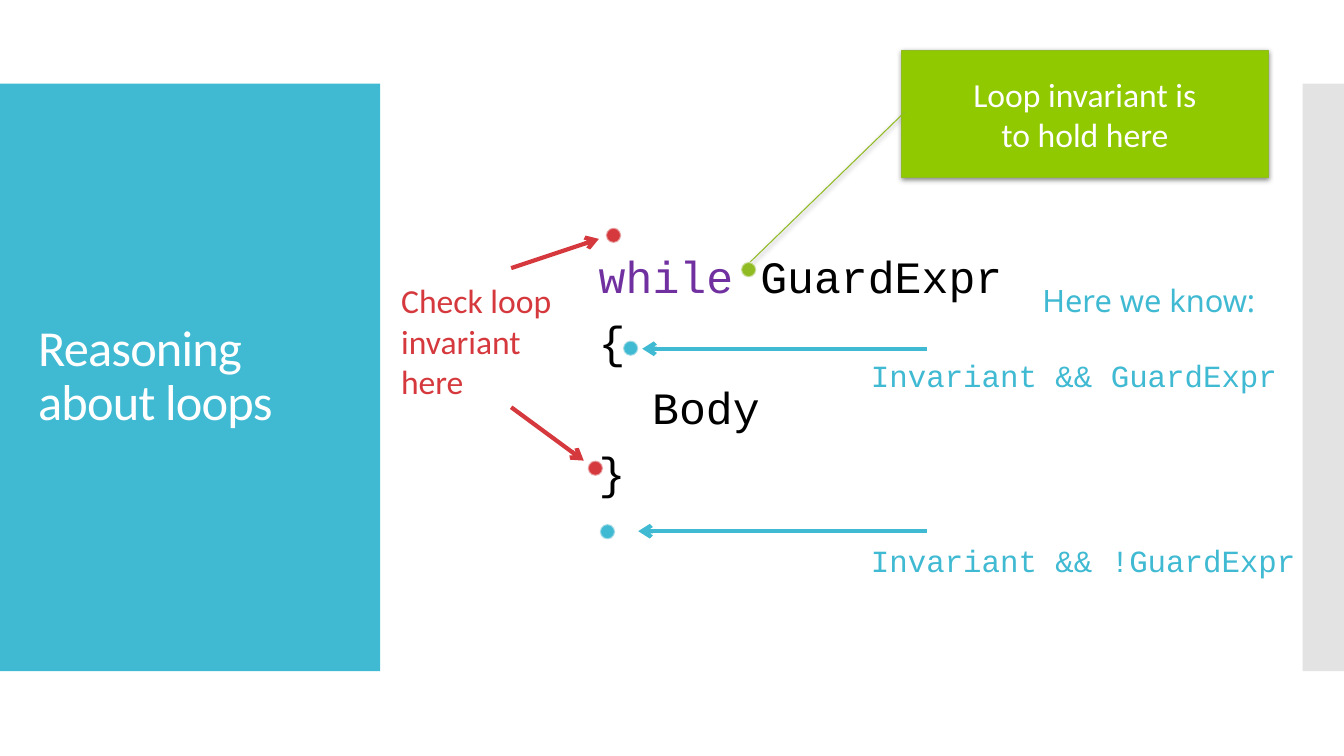
from dataclasses import dataclass

from lxml import etree
from pptx import Presentation
from pptx.dml.color import RGBColor
from pptx.enum.shapes import MSO_CONNECTOR, MSO_SHAPE
from pptx.enum.text import MSO_ANCHOR, MSO_AUTO_SIZE, PP_ALIGN
from pptx.oxml import parse_xml
from pptx.oxml.ns import nsdecls, qn
from pptx.util import Inches, Pt


@dataclass(frozen=True)
class Theme:
    teal: str = "40BAD2"
    red: str = "D5393D"
    green: str = "90BB23"
    callout: str = "90C900"
    keyword: str = "7030A0"
    code: str = "000000"
    white: str = "FFFFFF"
    edge: str = "C8C8C8"
    dot_rim: str = "F9F9F9"
    sans: str = "Calibri"
    mono: str = "Courier New"
    note: str = "Noto Sans"
    title_size: int = 36
    code_size: int = 32
    label_size: int = 24
    fact_size: int = 22


THEME = Theme()
DOT_SIZE = 0.15
CODE_INDENT = 0.53


def set_alpha(fill, percent):
    color = fill._xPr.find(f".//{qn('a:srgbClr')}")
    etree.SubElement(color, qn("a:alpha")).set("val", str(percent * 1000))


def style_run(run, font, size, color):
    run.font.name = font
    run.font.size = Pt(size)
    run.font.color.rgb = RGBColor.from_string(color)


def add_block(slide, kind, box, color):
    block = slide.shapes.add_shape(kind, *map(Inches, box))
    block.shadow.inherit = False
    block.fill.solid()
    block.fill.fore_color.rgb = RGBColor.from_string(color)
    block.line.fill.background()
    return block


def add_text(slide, box, text, font, size, color, anchor=MSO_ANCHOR.TOP):
    label = slide.shapes.add_textbox(*map(Inches, box))
    frame = label.text_frame
    frame.word_wrap = True
    frame.vertical_anchor = anchor
    frame.text = text
    for paragraph in frame.paragraphs:
        for run in paragraph.runs:
            style_run(run, font, size, color)
    return frame


def add_label(slide, box, text, font, size, color):
    frame = add_text(slide, box, text, font, size, color)
    frame.auto_size = MSO_AUTO_SIZE.SHAPE_TO_FIT_TEXT


def add_dot(slide, left, top, color):
    dot = add_block(slide, MSO_SHAPE.OVAL, (left, top, DOT_SIZE, DOT_SIZE), color)
    dot.line.color.rgb = RGBColor.from_string(THEME.dot_rim)
    dot.line.width = Pt(1.35)
    set_alpha(dot.line.fill, 50)


def add_arrow(slide, start, end, color):
    arrow = slide.shapes.add_connector(
        MSO_CONNECTOR.STRAIGHT, *map(Inches, (*start, *end)))
    arrow.line.color.rgb = RGBColor.from_string(color)
    arrow.line.width = Pt(3)
    etree.SubElement(arrow.line._ln, qn("a:tailEnd")).set("type", "arrow")
    etree.SubElement(arrow._element.spPr, qn("a:effectLst"))


def add_callout(slide, box, text):
    callout = add_block(slide, MSO_SHAPE.LINE_CALLOUT_1, box, THEME.callout)
    for index, value in enumerate((0.484, 0.01, 1.709, -0.427)):
        callout.adjustments[index] = value
    callout.line.color.rgb = RGBColor.from_string(THEME.green)
    callout.line.width = Pt(0.75)
    # Soft shadow straight below
    shadow = parse_xml(
        f'<a:outerShdw {nsdecls("a")} blurRad="{Pt(3.5)}" dist="{Pt(1.1)}" '
        'dir="5400000" rotWithShape="0"><a:srgbClr val="000000">'
        '<a:alpha val="45000"/></a:srgbClr></a:outerShdw>')
    callout._element.spPr.find(qn("a:effectLst")).append(shadow)
    frame = callout.text_frame
    frame.vertical_anchor = MSO_ANCHOR.MIDDLE
    paragraph = frame.paragraphs[0]
    paragraph.text = text
    paragraph.alignment = PP_ALIGN.CENTER
    for run in paragraph.runs:
        style_run(run, THEME.sans, THEME.label_size, THEME.white)


def add_title(slide, box, text):
    frame = add_text(slide, box, text, THEME.sans, THEME.title_size,
                     THEME.white, MSO_ANCHOR.MIDDLE)
    title = frame.paragraphs[0]
    title.line_spacing = 0.9
    title.runs[0].font._element.set("spc", "-60")


def add_code(slide, box):
    frame = add_text(slide, box, "while \n{\nBody\n}", THEME.mono,
                     THEME.code_size, THEME.code, MSO_ANCHOR.MIDDLE)
    for paragraph in frame.paragraphs:
        paragraph.line_spacing = 0.9
        paragraph.space_before = Pt(12)
    loop_head, _, body, _ = frame.paragraphs
    style_run(loop_head.runs[0], THEME.mono, THEME.code_size, THEME.keyword)
    guard = loop_head.add_run()
    guard.text = "GuardExpr"
    style_run(guard, THEME.mono, THEME.code_size, THEME.code)
    body._p.get_or_add_pPr().set("marL", str(Inches(CODE_INDENT)))


def main():
    deck = Presentation()
    deck.slide_width, deck.slide_height = Inches(13.33), Inches(7.5)
    slide = deck.slides.add_slide(deck.slide_layouts[6])

    # Side panels and title
    add_block(slide, MSO_SHAPE.RECTANGLE, (0, 0.83, 3.77, 5.83), THEME.teal)
    edge = add_block(slide, MSO_SHAPE.RECTANGLE, (12.92, 0.83, 0.41, 5.83), THEME.edge)
    set_alpha(edge.fill, 50)
    add_title(slide, (0.28, 1.23, 3.22, 5.03), "Reasoning about loops")

    # Loop code and where its invariant holds
    add_code(slide, (5.84, 0.94, 6.7, 5.6))
    add_callout(slide, (8.94, 0.5, 3.64, 1.26), "Loop invariant is\vto hold here")
    add_dot(slide, 7.35, 2.6, THEME.green)

    # Places to check the invariant
    add_arrow(slide, (5.07, 2.66), (5.94, 2.37), THEME.red)
    add_arrow(slide, (5.07, 4.04), (5.79, 4.57), THEME.red)
    add_label(slide, (3.88, 2.73, 1.87, 1.31), "Check loop invariant here",
              THEME.sans, THEME.label_size, THEME.red)

    # Facts known inside and after the loop
    for arrow_y, arrow_end, text_top, fact in (
            (3.46, 6.37, 3.49, "Invariant && GuardExpr"),
            (5.27, 6.33, 5.33, "Invariant && !GuardExpr")):
        add_arrow(slide, (9.19, arrow_y), (arrow_end, arrow_y), THEME.teal)
        add_label(slide, (8.54, text_top, 4.82, 0.47), fact,
                  THEME.mono, THEME.fact_size, THEME.teal)
    add_label(slide, (10.24, 2.75, 3.1, 0.47), "Here we know:",
              THEME.note, THEME.fact_size, THEME.teal)

    # Program points
    for left, top, color in ((6.01, 2.26, THEME.red), (5.83, 4.57, THEME.red),
                             (6.18, 3.38, THEME.teal), (5.95, 5.2, THEME.teal)):
        add_dot(slide, left, top, color)

    deck.save("out.pptx")


if __name__ == "__main__":
    main()
